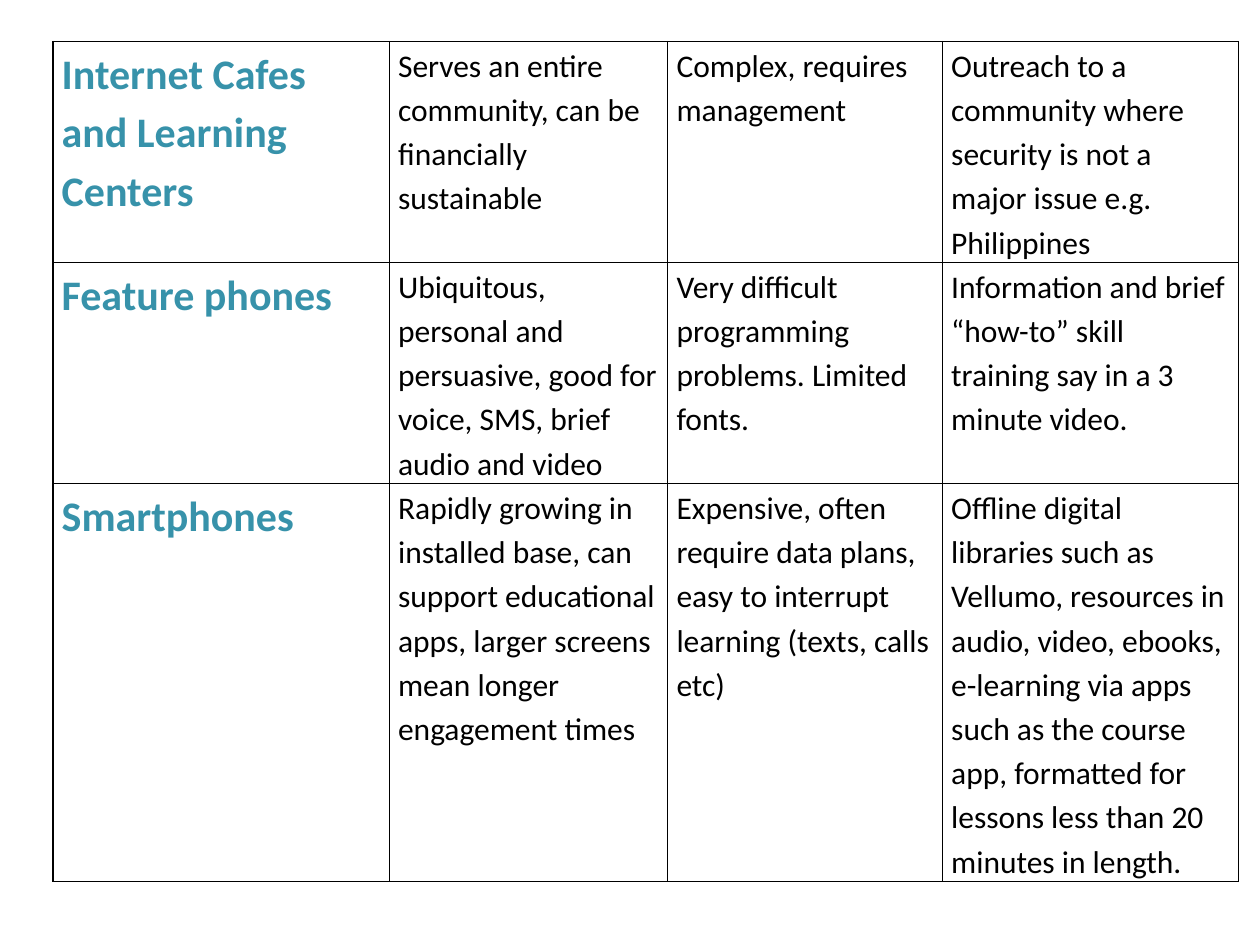
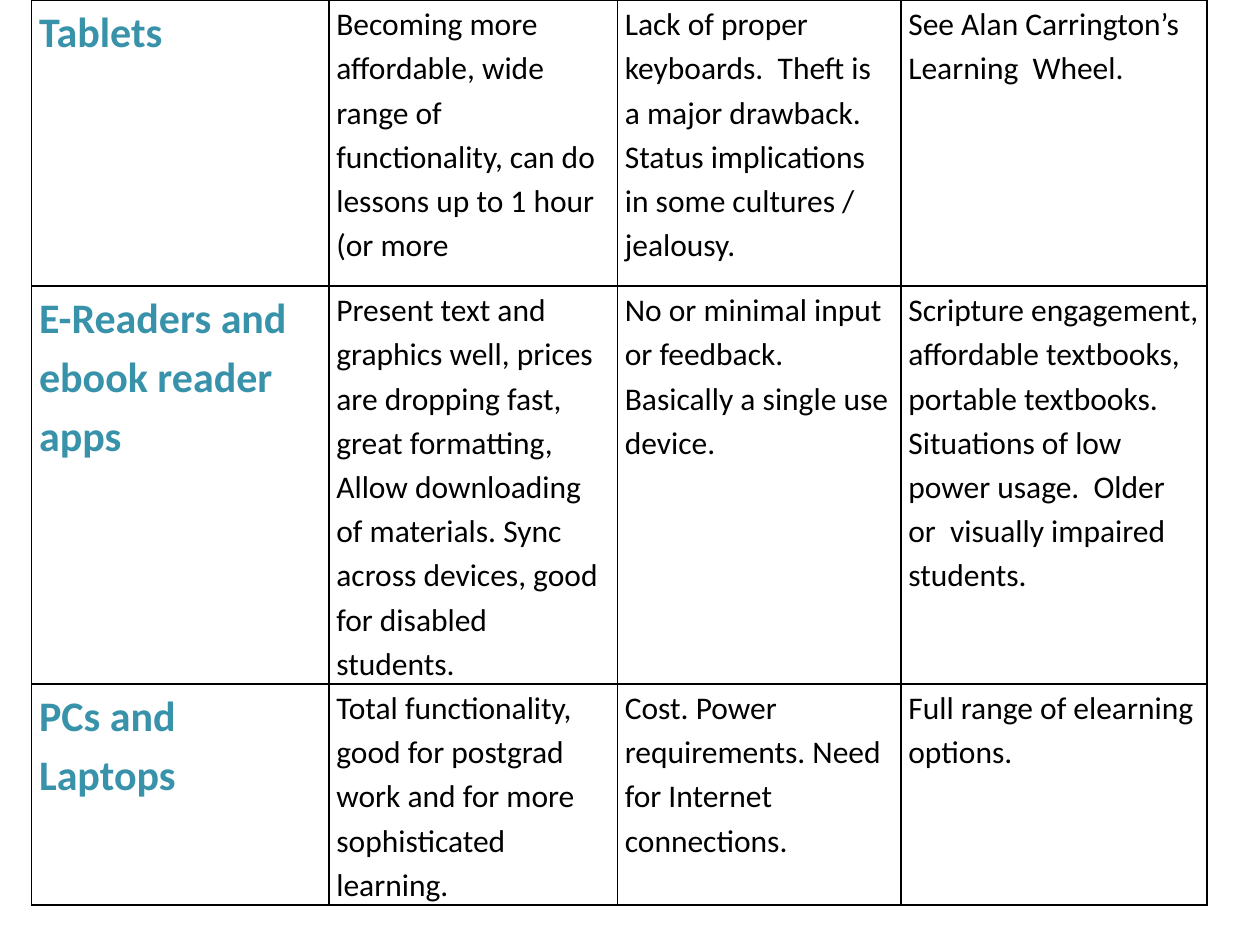
import pptx
import pptx.dml.color
import pptx.util
from lxml import etree
from pptx.oxml import ns

Inches = pptx.util.Inches
Pt = pptx.util.Pt
RGBColor = pptx.dml.color.RGBColor

TEAL = RGBColor(0x37, 0x92, 0xAA)
BLACK = RGBColor(0, 0, 0)
FONT = "Calibri"
BORDER_WIDTH = Pt(1)

TABLES = [
    {
        "left": 0.42, "top": 0.33, "inset": 0.07,
        "cols": [2.67, 2.21, 2.18, 2.35],
        "rows": [1.37, 1.37, 3.08],
        "cells": [
            ("Internet Cafes and Learning Centers",
             "Serves an entire community, can be financially sustainable",
             "Complex, requires management",
             "Outreach to a community where security is not a major issue e.g. Philippines"),
            ("Feature phones",
             "Ubiquitous, personal and persuasive, good for voice, SMS, brief audio and video",
             "Very difficult programming problems. Limited fonts.",
             "Information and brief “how-to” skill training say in a 3 minute video."),
            ("Smartphones",
             "Rapidly growing in installed base, can support educational apps, "
             "larger screens mean longer engagement times",
             "Expensive, often require data plans, easy to interrupt learning (texts, calls etc)",
             "Offline digital libraries such as Vellumo, resources in audio, video, ebooks, "
             "e-learning via apps such as the course app, formatted for lessons less than "
             "20 minutes in length."),
        ],
    },
    {
        "left": 0.25, "top": 0, "inset": 0.06,
        "cols": [2.36, 2.29, 2.25, 2.43],
        "rows": [2.27, 2.99, 1.66],
        "cells": [
            ("Tablets",
             "Becoming more affordable, wide range of functionality, "
             "can do lessons up to 1 hour (or more",
             "Lack of proper keyboards.  Theft is a major drawback. "
             "Status implications in some cultures / jealousy.",
             "See Alan Carrington’s Learning  Wheel."),
            ("E-Readers and ebook reader apps",
             "Present text and graphics well, prices are dropping fast, great formatting, "
             "Allow downloading of materials. Sync across devices, good for disabled students.",
             "No or minimal input or feedback. Basically a single use device.",
             "Scripture engagement, affordable textbooks, portable textbooks. "
             "Situations of low power usage.  Older or  visually impaired students."),
            ("PCs and Laptops",
             "Total functionality, good for postgrad work and for more sophisticated learning.",
             "Cost. Power requirements. Need for Internet connections.",
             "Full range of elearning options."),
        ],
    },
]


def add_borders(cell):
    tc_pr = cell._tc.get_or_add_tcPr()
    for side in ("a:lnL", "a:lnR", "a:lnT", "a:lnB"):
        ln = etree.SubElement(tc_pr, ns.qn(side), w=str(BORDER_WIDTH))
        fill = etree.SubElement(ln, ns.qn("a:solidFill"))
        etree.SubElement(fill, ns.qn("a:srgbClr"), val=str(BLACK))


def fill_cell(cell, text, inset, is_device):
    add_borders(cell)
    cell.fill.background()
    cell.margin_left = cell.margin_right = Inches(inset)
    cell.margin_top = cell.margin_bottom = 0
    cell.text_frame.text = text
    p = cell.text_frame.paragraphs[0]
    p.line_spacing = 1.15
    font = p.runs[0].font
    font.name = FONT
    font.size = Pt(24 if is_device else 18)
    font.bold = is_device
    font.color.rgb = TEAL if is_device else BLACK


def add_device_table(s, spec):
    cols, rows = spec["cols"], spec["rows"]
    table = s.shapes.add_table(
        len(rows), len(cols), Inches(spec["left"]), Inches(spec["top"]),
        Inches(sum(cols)), Inches(sum(rows))).table
    table.first_row = table.horz_banding = False
    for column, width in zip(table.columns, cols):
        column.width = Inches(width)
    for row, height, texts in zip(table.rows, rows, spec["cells"]):
        row.height = Inches(height)
        for i, (cell, text) in enumerate(zip(row.cells, texts)):
            fill_cell(cell, text, spec["inset"], i == 0)


def main():
    prs = pptx.Presentation()
    prs.slide_width, prs.slide_height = Inches(10), Inches(7.5)
    for spec in TABLES:
        s = prs.slides.add_slide(prs.slide_layouts[6])
        add_device_table(s, spec)
    prs.save("out.pptx")


if __name__ == "__main__":
    main()
